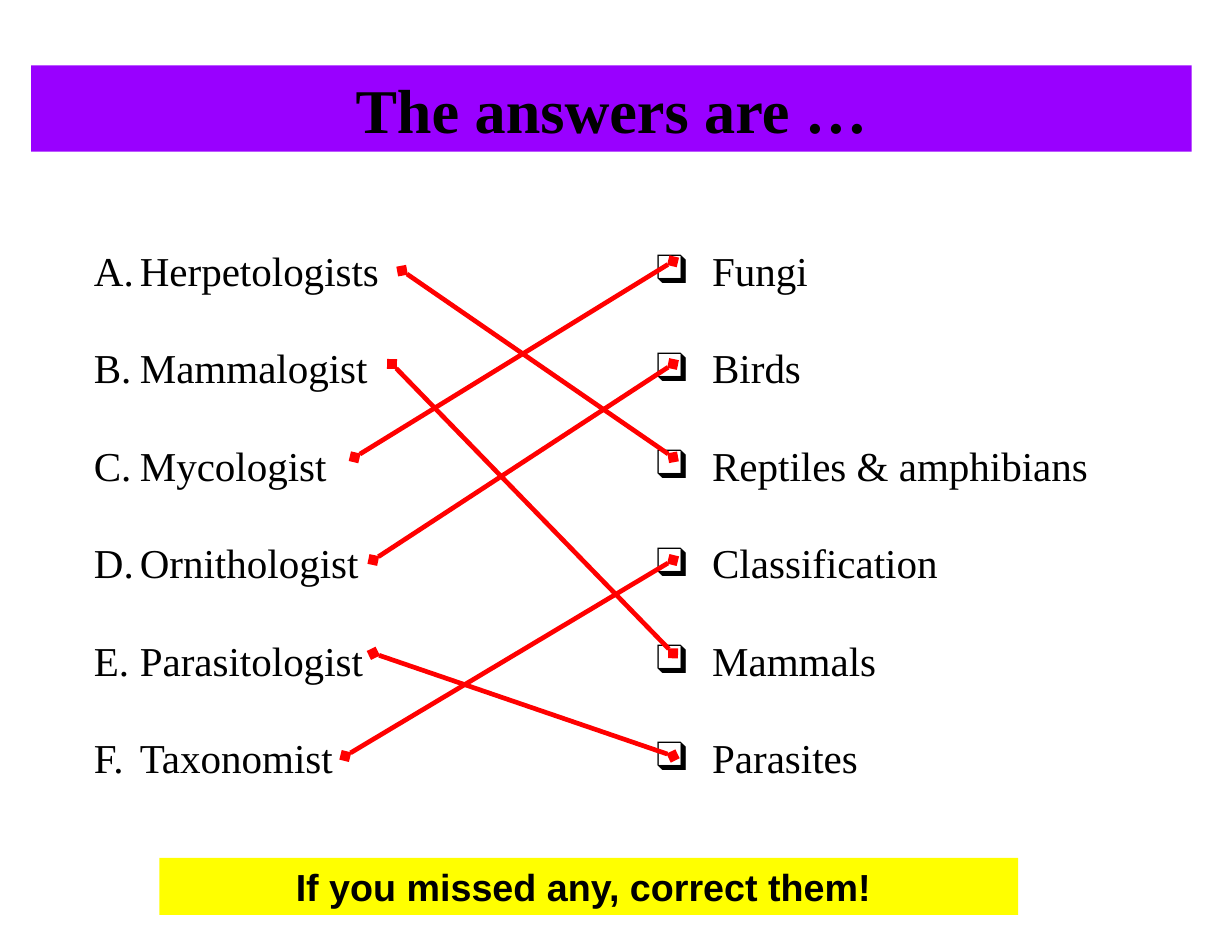
"""Build the matching-answers slide."""
from lxml import etree
from pptx import Presentation
from pptx.dml.color import RGBColor
from pptx.enum.shapes import MSO_CONNECTOR, MSO_SHAPE
from pptx.enum.text import MSO_ANCHOR, PP_ALIGN
from pptx.oxml.ns import qn
from pptx.util import Pt

RECTANGLE = MSO_SHAPE.RECTANGLE
STRAIGHT = MSO_CONNECTOR.STRAIGHT
TOP, BOTTOM = MSO_ANCHOR.TOP, MSO_ANCHOR.BOTTOM
CENTER = PP_ALIGN.CENTER
PURPLE = RGBColor(0x99, 0x00, 0xFF)
YELLOW = RGBColor(0xFF, 0xFF, 0x00)
RED = RGBColor(0xFF, 0x00, 0x00)
BLACK = RGBColor(0x00, 0x00, 0x00)
SERIF, SANS = "Times New Roman", "Arial"


def add_run(p, text, font, size, bold=False):
    r = p.add_run()
    r.text = text
    for name, value in {"name": font, "size": Pt(size), "bold": bold}.items():
        setattr(r.font, name, value)
    r.font.color.rgb = BLACK


def add_element(parent, tag, **attributes):
    return etree.SubElement(parent, qn(tag), attributes)


prs = Presentation()
prs.slide_width, prs.slide_height = Pt(792), Pt(612)
s = prs.slides.add_slide(prs.slide_layouts[6])

banners = [
    ("The answers are …", (20, 42, 746, 55.5), PURPLE, SERIF, 40, BOTTOM),
    ("If you missed any, correct them! ", (102.5, 551.5, 552, 36.7), YELLOW, SANS, 24.2, TOP),
]
for text, box, fill, font, size, anchor in banners:
    sp = s.shapes.add_shape(RECTANGLE, *map(Pt, box))
    sp.shadow.inherit = False
    sp.fill.solid()
    sp.fill.fore_color.rgb = fill
    sp.line.fill.background()
    tf = sp.text_frame
    for name, value in {"word_wrap": True, "vertical_anchor": anchor}.items():
        setattr(tf, name, value)
    p = tf.paragraphs[0]
    p.alignment = CENTER
    add_run(p, text, font, size, True)

scientists = ["Herpetologists", "Mammalogist", "Mycologist",
              "Ornithologist", "Parasitologist", "Taxonomist"]
subjects = ["Fungi", "Birds", "Reptiles & amphibians",
            "Classification", "Mammals", "Parasites"]
columns = [
    (scientists, 53.3, 225, 29.5, "a:buAutoNum", {"type": "alphaUcPeriod"}),
    (subjects, 414.7, 300, 36, "a:buChar", {"char": "❑"}),
]
for items, left, width, indent, tag, bullet in columns:
    tf = s.shapes.add_textbox(Pt(left), Pt(138.2), Pt(width), Pt(369.4)).text_frame
    tf.word_wrap = True
    for i, item in enumerate(items):
        p = tf.add_paragraph() if i else tf.paragraphs[0]
        for name, value in {"line_spacing": 1.5, "space_before": Pt(15.2)}.items():
            setattr(p, name, value)
        pPr = p._p.get_or_add_pPr()
        pPr.set("marL", str(Pt(indent)))
        pPr.set("indent", str(-Pt(indent)))
        add_element(pPr, "a:buFont", typeface=SERIF)
        add_element(pPr, tag, **bullet)
        add_run(p, item, SERIF, 26.4)

matches = [
    (258.5, 174, 294), (252, 234, 420), (228, 294, 168),
    (240, 360, 234), (240, 420, 486), (222, 486, 360),
]
for x, y, end_y in matches:
    line = s.shapes.add_connector(STRAIGHT, Pt(x), Pt(y), Pt(432.7), Pt(end_y))
    line.line.color.rgb = RED
    line.line.width = Pt(3)
    ln = line.line._get_or_add_ln()
    for tag in ("a:headEnd", "a:tailEnd"):
        add_element(ln, tag, type="diamond")
    add_element(line._element.spPr, "a:effectLst")

prs.save("out.pptx")
